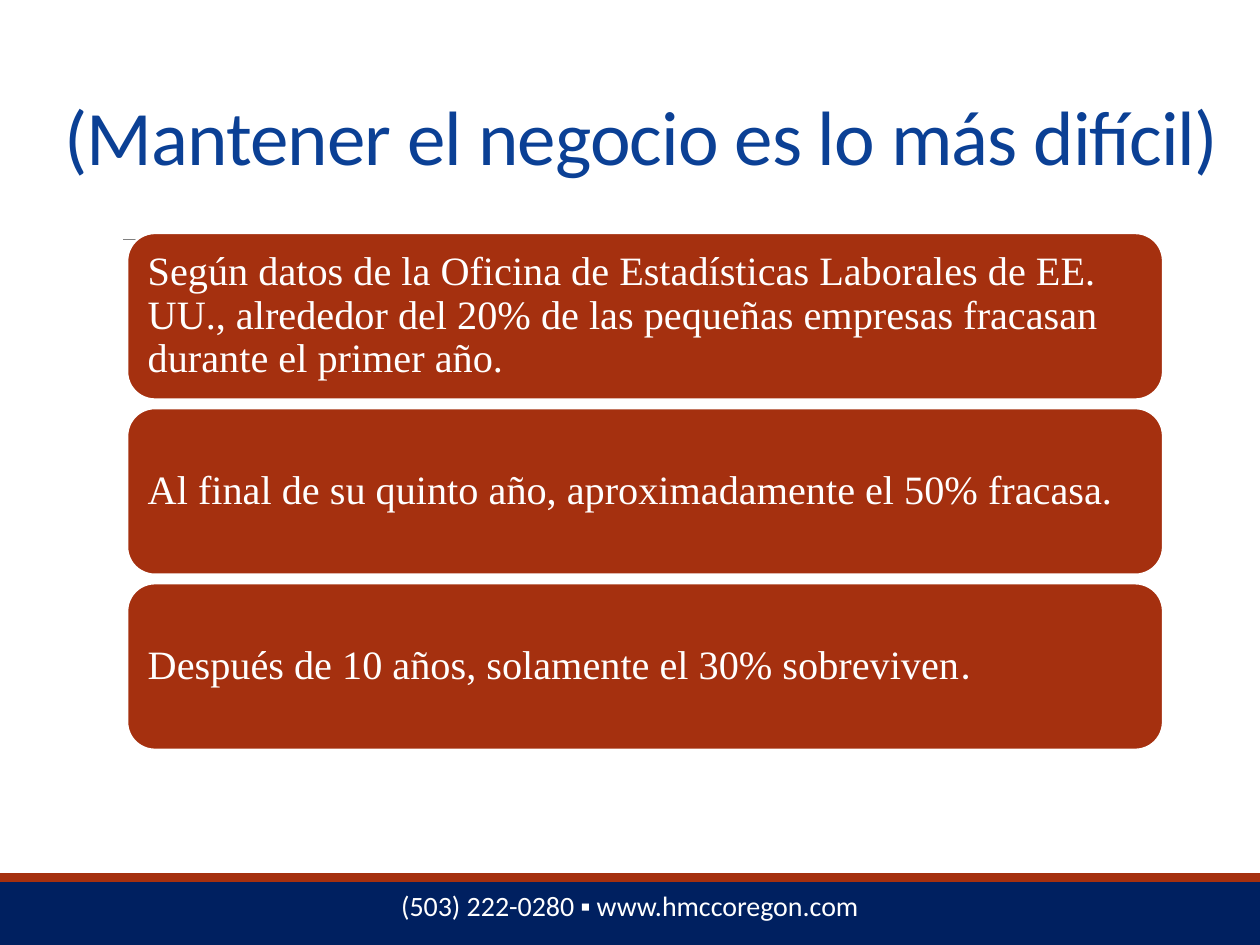
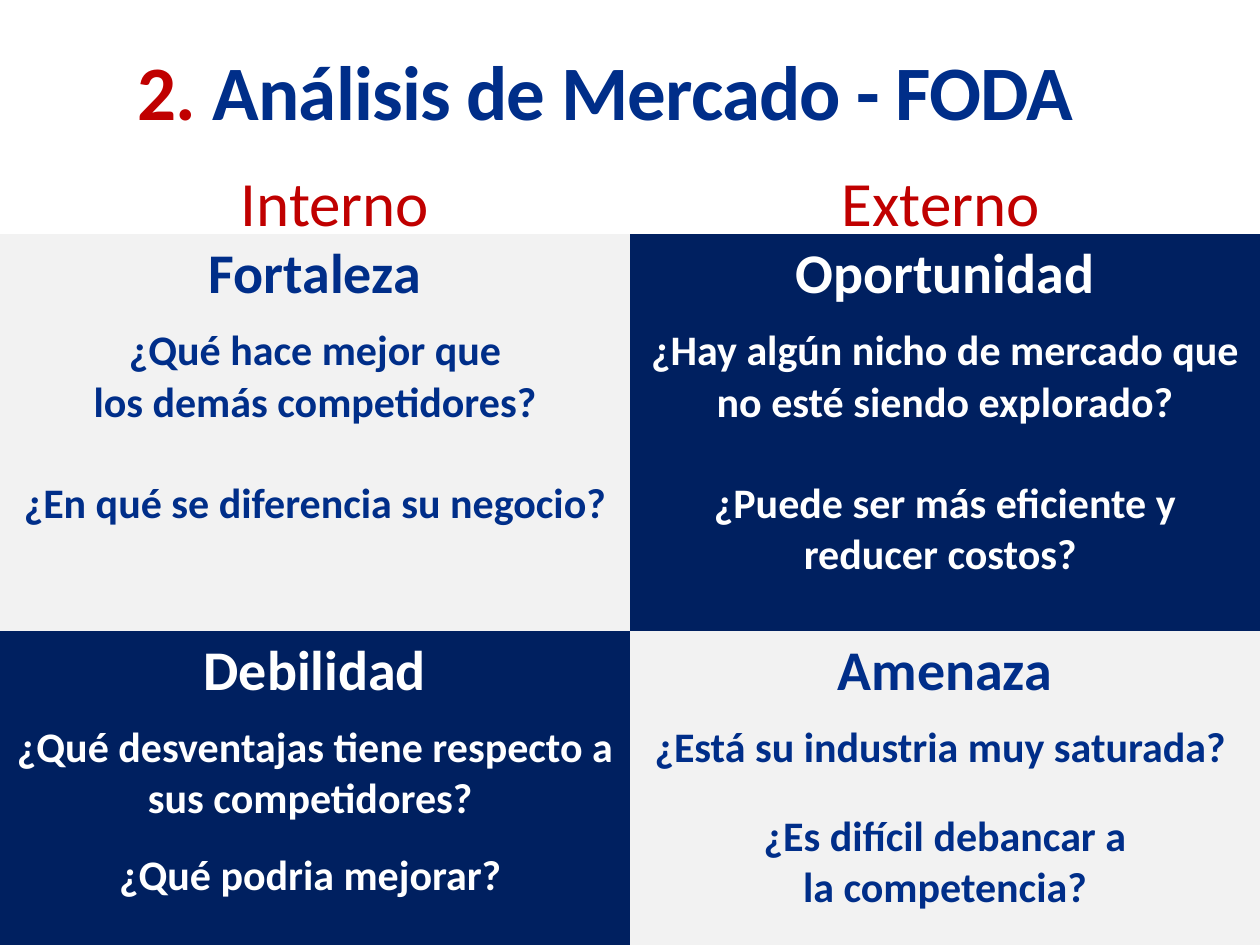
from dataclasses import dataclass

from lxml import etree
from pptx import Presentation
from pptx import util as u
from pptx.dml.color import RGBColor
from pptx.enum import shapes, text
from pptx.oxml import ns


@dataclass(frozen=True)
class Theme:
    navy: str = "002060"
    brick: str = "A5300F"
    blue: str = "0B4095"
    ink: str = "002E89"
    red: str = "C00000"
    pale: str = "F2F2F2"
    white: str = "FFFFFF"
    gray: str = "808080"
    sans: str = "Calibri"
    serif: str = "Times New Roman"
    title: int = 44
    axis: int = 36
    heading: int = 32
    question: int = 24
    fact: int = 23
    footer: int = 16


T = Theme()

FOOTER = "(503) 222-0280 ▪ www.hmccoregon.com"
SURVIVAL_TITLE = [("(Mantener el negocio es lo más difícil)", T.blue)]
FACTS = [
    [("Según datos de la Oficina de Estadísticas Laborales de EE. UU., "
      "alrededor del 20% de las pequeñas empresas fracasan durante el "
      "primer año.", T.serif)],
    [("Al final de su quinto año, aproximadamente el 50% fracasa.", T.serif)],
    [("Después de 10 años, solamente el 30% sobreviven", T.serif),
     (".", T.sans)],
]
SWOT_TITLE = [("2. ", T.red), ("Análisis de Mercado - FODA", T.ink)]
AXES = [("Interno", 1.68), ("Externo", 6.49)]
SWOT = [
    [("Fortaleza", 24, ["¿Qué hace mejor que\nlos demás competidores?",
                        "¿En qué se diferencia su negocio?"]),
     ("Oportunidad", 24, ["¿Hay algún nicho de mercado que no esté siendo explorado?",
                          "¿Puede ser más eficiente y\nreducer costos? "])],
    [("Debilidad", 12, ["¿Qué desventajas tiene respecto a sus competidores? ",
                        "¿Qué podria mejorar? "]),
     ("Amenaza", 18, ["¿Está su industria muy saturada? ",
                      "¿Es difícil debancar a\nla competencia?"])],
]
ROW_HEIGHTS = [3.15, 2.64]
LINE_FACTOR = 1.2
HEADING_GAP = 8
NO_GRID_STYLE = "{2D5ABB26-0587-4C30-8999-92F81FD0307C}"


def rgb(code):
    return RGBColor.from_string(code)


def inches(*values):
    return [u.Inches(v) for v in values]


def style(font, size, color, name=T.sans, bold=False):
    font.size, font.name, font.bold = u.Pt(size), name, bold
    font.color.rgb = rgb(color)


def add_block(s, kind, box, fill, line=None):
    sp = s.shapes.add_shape(kind, *inches(*box))
    sp.shadow.inherit = False
    sp.fill.solid()
    sp.fill.fore_color.rgb = rgb(fill)
    if line:
        sp.line.color.rgb = rgb(line)
        sp.line.width = u.Pt(1.25)
    else:
        sp.line.fill.background()
    return sp


def add_textbox(s, box):
    tf = s.shapes.add_textbox(*inches(*box)).text_frame
    tf.word_wrap = True
    return tf


def add_title(s, box, runs, align, anchor, bold=False):
    tf = add_textbox(s, box)
    tf.vertical_anchor = anchor
    p = tf.paragraphs[0]
    p.alignment, p.line_spacing = align, 0.85
    for words, color in runs:
        r = p.add_run()
        r.text = words
        style(r.font, T.title, color, bold=bold)
        r._r.get_or_add_rPr().set("spc", "-50")


def add_rule(s):
    rule = s.shapes.add_connector(shapes.MSO_CONNECTOR.STRAIGHT,
                                  *inches(0.98, 1.9, 9.15, 1.9))
    rule.line.color.rgb = rgb(T.gray)
    rule.line.width = u.Pt(0.5)
    etree.SubElement(rule._element.spPr, ns.qn("a:effectLst"))


def add_footer(s):
    rect = shapes.MSO_SHAPE.RECTANGLE
    tf = add_block(s, rect, (0, 7, 10, 0.5), T.navy).text_frame
    tf.vertical_anchor = text.MSO_ANCHOR.TOP
    p = tf.paragraphs[0]
    p.text, p.alignment = FOOTER, text.PP_ALIGN.CENTER
    style(p.font, T.footer, T.white)
    add_block(s, rect, (0, 6.93, 10, 0.07), T.brick)


def add_base_slide(prs):
    s = prs.slides.add_slide(prs.slide_layouts[6])
    add_rule(s)
    add_footer(s)
    return s


def add_fact(s, top, runs):
    sp = add_block(s, shapes.MSO_SHAPE.ROUNDED_RECTANGLE,
                   (1.01, top, 8.22, 1.32), T.brick, T.white)
    tf = sp.text_frame
    tf.word_wrap = True
    tf.vertical_anchor = text.MSO_ANCHOR.MIDDLE
    tf.margin_left = tf.margin_right = u.Inches(0.1)
    tf.margin_top = tf.margin_bottom = u.Inches(0.1)
    p = tf.paragraphs[0]
    p.alignment, p.line_spacing = text.PP_ALIGN.LEFT, 0.9
    for words, name in runs:
        r = p.add_run()
        r.text = words
        style(r.font, T.fact, T.white, name)


def add_axes(s):
    p = add_textbox(s, (0.88, 1.25, 8.44, 0.71)).paragraphs[0]
    tabs = etree.SubElement(p._p.get_or_add_pPr(), ns.qn("a:tabLst"))
    for _, center in AXES:
        etree.SubElement(tabs, ns.qn("a:tab"),
                         pos=str(u.Inches(center)), algn="ctr")
    p.text = "".join("\t" + label for label, _ in AXES)
    style(p.font, T.axis, T.red)


def fill_quadrant(cell, quadrant, dark):
    heading, gap, questions = quadrant
    cell.fill.solid()
    cell.fill.fore_color.rgb = rgb(T.navy if dark else T.pale)
    color = T.white if dark else T.ink
    lines = [(heading, T.heading, 0)]
    lines += [(q, T.question, space)
              for q, space in zip(questions, (HEADING_GAP, gap))]
    tf = cell.text_frame
    for i, (words, size, space) in enumerate(lines):
        p = tf.add_paragraph() if i else tf.paragraphs[0]
        p.text, p.alignment = words, text.PP_ALIGN.CENTER
        if space:
            p.space_before = u.Pt(round(space * LINE_FACTOR, 1))
        style(p.font, size, color, bold=True)


def add_swot(s):
    tbl = s.shapes.add_table(2, 2, *inches(0, 1.86, 10, sum(ROW_HEIGHTS))).table
    tbl.first_row = tbl.horz_banding = False
    tbl._tbl.tblPr.find(ns.qn("a:tableStyleId")).text = NO_GRID_STYLE
    for i, quadrants in enumerate(SWOT):
        tbl.rows[i].height = u.Inches(ROW_HEIGHTS[i])
        for j, quadrant in enumerate(quadrants):
            fill_quadrant(tbl.cell(i, j), quadrant, dark=i != j)


def survival_slide(prs):
    s = add_base_slide(prs)
    add_title(s, (0.41, 0.51, 9.42, 0.98), SURVIVAL_TITLE,
              text.PP_ALIGN.LEFT, text.MSO_ANCHOR.BOTTOM)
    for i, runs in enumerate(FACTS):
        add_fact(s, 1.85 + i * 1.39, runs)


def swot_slide(prs):
    s = add_base_slide(prs)
    add_title(s, (0.68, 0.41, 8.25, 0.95), SWOT_TITLE,
              text.PP_ALIGN.CENTER, text.MSO_ANCHOR.TOP, bold=True)
    add_axes(s)
    add_swot(s)


def main():
    prs = Presentation()
    prs.slide_width, prs.slide_height = inches(10, 7.5)
    survival_slide(prs)
    swot_slide(prs)
    prs.save("out.pptx")


if __name__ == "__main__":
    main()
